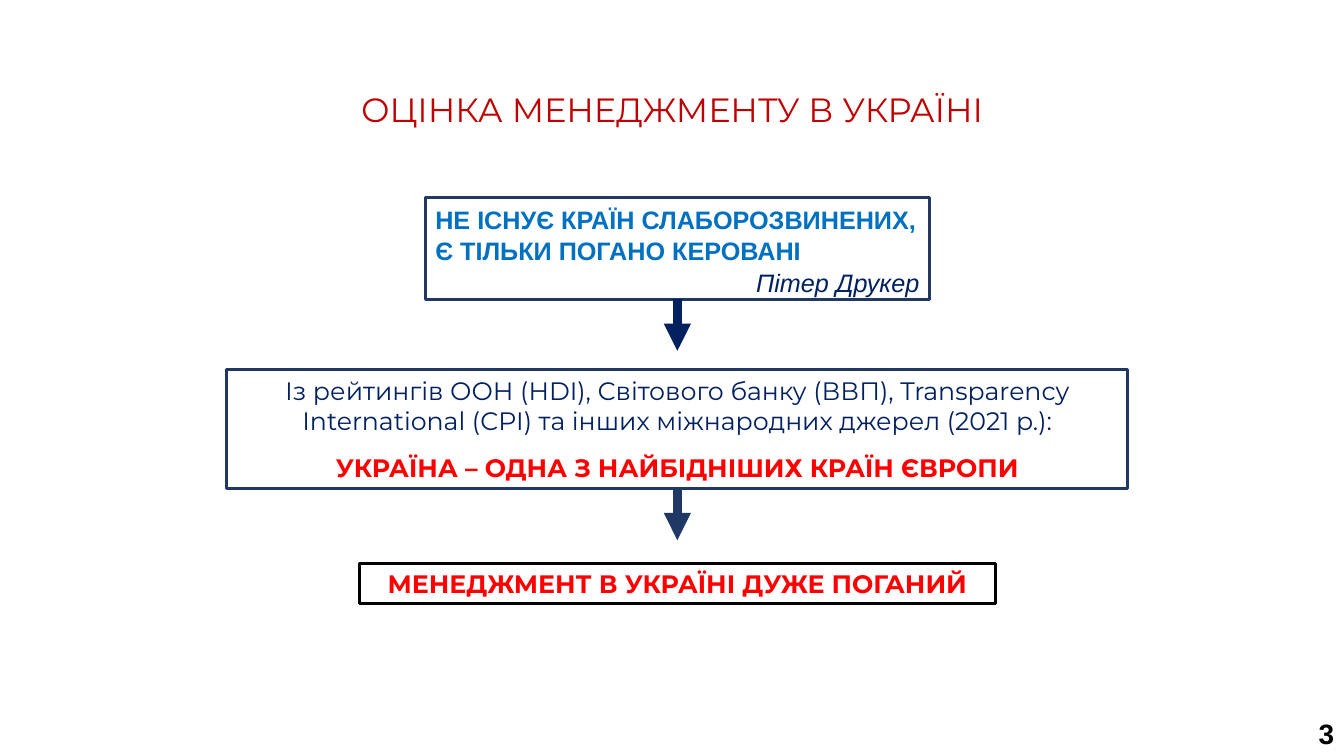
from lxml import etree
from pptx import Presentation
from pptx import util as u
from pptx.dml.color import RGBColor
from pptx.enum import shapes, text
from pptx.oxml import ns

COLORS = {"title": "C00000", "quote": "0070C0", "navy": "002060",
          "frame": "203864", "alert": "FF0000", "black": "000000"}
ALIGN = text.PP_ALIGN
AXIS = 50.4  # shared centre line of the chain, % of slide width


def write(frame, words, first=False, size=18, font="Montserrat", color="navy",
          bold=False, italic=False, align=ALIGN.CENTER, after=0, spacing=1.0):
    """Put one formatted paragraph into a text frame."""
    line = frame.paragraphs[0] if first else frame.add_paragraph()
    line.alignment = align
    line.space_before, line.space_after = u.Pt(0), u.Pt(after)
    line.line_spacing = spacing
    run = line.add_run()
    run.text = words
    run.font.name, run.font.size = font, u.Pt(size)
    run.font.bold, run.font.italic = bold, italic
    run.font.color.rgb = RGBColor.from_string(COLORS[color])


class Deck:
    """Places elements by percentages of the slide's width and height."""

    def __init__(self, width=13.33, height=7.5):
        self.show = Presentation()
        self.show.slide_width, self.show.slide_height = u.Inches(width), u.Inches(height)
        self.slide = self.show.slides.add_slide(self.show.slide_layouts[5])

    def x(self, share):
        return int(self.show.slide_width * share / 100)

    def y(self, share):
        return int(self.show.slide_height * share / 100)

    def fill_frame(self, frame, paragraphs, wrap=True):
        frame.word_wrap = wrap
        frame.vertical_anchor = text.MSO_ANCHOR.TOP
        for index, (words, style) in enumerate(paragraphs):
            write(frame, words, first=index == 0, **style)

    def title(self, top, height, words, **style):
        heading = self.slide.shapes.title
        heading.left, heading.top = 0, self.y(top)
        heading.width, heading.height = self.x(100), self.y(height)
        self.fill_frame(heading.text_frame, [(words, style)])

    def label(self, left, top, width, height, words, **style):
        box = self.slide.shapes.add_textbox(
            self.x(left), self.y(top), self.x(width), self.y(height))
        self.fill_frame(box.text_frame, [(words, style)], wrap=False)

    def framed(self, top, width, height, paragraphs, outline="frame"):
        """Outlined box centred on the chain's axis."""
        box = self.slide.shapes.add_shape(
            shapes.MSO_SHAPE.RECTANGLE, self.x(AXIS - width / 2), self.y(top),
            self.x(width), self.y(height))
        box.shadow.inherit = False
        box.fill.background()
        box.line.color.rgb = RGBColor.from_string(COLORS[outline])
        box.line.width = u.Pt(2.25)
        self.fill_frame(box.text_frame, paragraphs)
        return box

    def arrow_below(self, box, color, length=6.8):
        middle, bottom = box.left + box.width // 2, box.top + box.height
        arrow = self.slide.shapes.add_connector(
            shapes.MSO_CONNECTOR.STRAIGHT, middle, bottom, middle, bottom + self.y(length))
        arrow.begin_connect(box, 2)
        arrow.line.color.rgb = RGBColor.from_string(COLORS[color])
        arrow.line.width = u.Pt(6.5)
        etree.SubElement(arrow.line._get_or_add_ln(), ns.qn("a:tailEnd"), type="triangle")
        etree.SubElement(arrow._element.spPr, ns.qn("a:effectLst"))


def main():
    deck = Deck()
    deck.title(11.07, 6.67, "ОЦІНКА МЕНЕДЖМЕНТУ В УКРАЇНІ", size=24, color="title")

    arial = dict(font="Arial", spacing=1.05)
    saying = dict(arial, color="quote", bold=True, align=ALIGN.LEFT)
    quote = deck.framed(26.13, 37.5, 13.47, [
        ("НЕ ІСНУЄ КРАЇН СЛАБОРОЗВИНЕНИХ,", saying),
        ("Є ТІЛЬКИ ПОГАНО КЕРОВАНІ", saying),
        ("Пітер Друкер", dict(arial, italic=True, align=ALIGN.RIGHT))])

    alert = dict(color="alert", bold=True)
    ratings = deck.framed(48.93, 67.05, 15.73, [
        ("Із рейтингів ООН (HDI), Світового банку (ВВП), Transparency International (CPI) "
         "та інших міжнародних джерел (2021 р.):", dict(after=12)),
        ("УКРАЇНА – ОДНА З НАЙБІДНІШИХ КРАЇН ЄВРОПИ", alert)])

    deck.framed(74.53, 47.35, 5.33,
                [("МЕНЕДЖМЕНТ В УКРАЇНІ ДУЖЕ ПОГАНИЙ", alert)], outline="black")

    deck.arrow_below(quote, "navy")
    deck.arrow_below(ratings, "frame")
    deck.label(97.37, 94.13, 2.7, 5.87, "3", size=20, font="Arial",
               color="black", bold=True, align=ALIGN.LEFT)
    deck.show.save("out.pptx")


if __name__ == "__main__":
    main()
